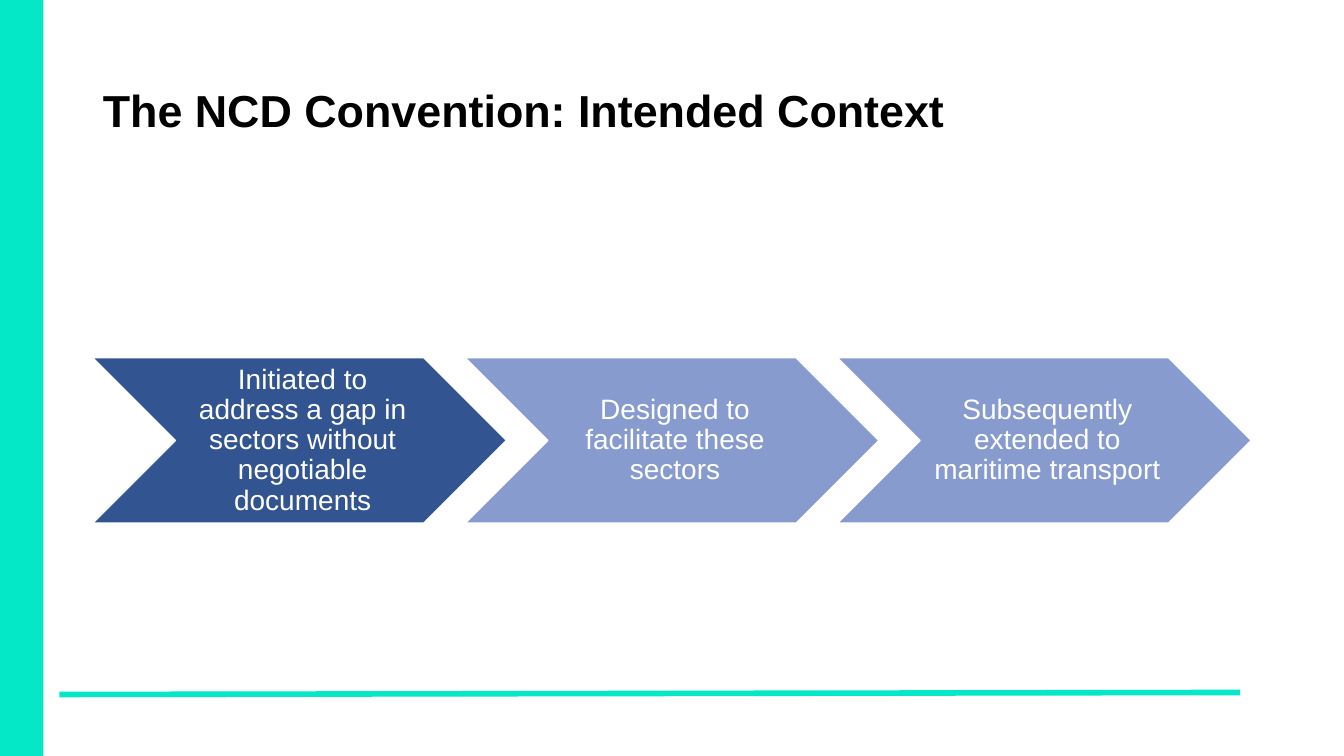
from lxml import etree
from pptx import Presentation
from pptx.dml.color import RGBColor
from pptx.enum.shapes import MSO_CONNECTOR, MSO_SHAPE
from pptx.enum.text import MSO_ANCHOR, PP_ALIGN
from pptx.oxml.ns import qn
from pptx.util import Inches, Pt

COLORS = {
    "accent": "04E8C7",
    "title": "000000",
    "first_step": "325491",
    "next_step": "879BCE",
    "white": "FFFFFF",
}
STEPS = [
    "Initiated to address a gap in sectors without negotiable documents",
    "Designed to facilitate these sectors",
    "Subsequently extended to maritime transport",
]


def rgb(name):
    return RGBColor.from_string(COLORS[name])


def format_text(p, size, color, align, bold=False):
    p.alignment = align
    p.line_spacing = 0.9
    p.font.name = "Arial"
    p.font.size = Pt(size)
    p.font.bold = bold
    p.font.color.rgb = rgb(color)


def add_frame(slide, width, height):
    """Draw the bar on the left edge and the rule near the bottom."""
    rule = slide.shapes.add_connector(
        MSO_CONNECTOR.STRAIGHT,
        Inches(width - 1.03), Inches(height - 0.63),
        Inches(0.59), Inches(height - 0.61))
    rule.line.color.rgb = rgb("accent")
    rule.line.width = Pt(4)
    etree.SubElement(rule._element.spPr, qn("a:effectLst"))

    bar = slide.shapes.add_shape(
        MSO_SHAPE.RECTANGLE, 0, 0, Inches(0.43), Inches(height))
    bar.shadow.inherit = False
    bar.fill.solid()
    bar.fill.fore_color.rgb = rgb("accent")
    bar.line.fill.background()


def set_title(slide, text, left, top, width, height):
    title = slide.shapes.title
    title.left, title.top = Inches(left), Inches(top)
    title.width, title.height = Inches(width), Inches(height)
    tf = title.text_frame
    tf.text = text
    tf.word_wrap = True
    tf.vertical_anchor = MSO_ANCHOR.MIDDLE
    format_text(tf.paragraphs[0], 32, "title", PP_ALIGN.LEFT, bold=True)


def add_process(slide, steps, left, top, width, height):
    """Fill the box with chevrons, each overlapping the next by a tenth."""
    step_width = width / (0.9 * (len(steps) - 1) + 1)
    for i, text in enumerate(steps):
        sp = slide.shapes.add_shape(
            MSO_SHAPE.CHEVRON, Inches(left + 0.9 * step_width * i),
            Inches(top), Inches(step_width), Inches(height))
        sp.shadow.inherit = False
        sp.fill.solid()
        sp.fill.fore_color.rgb = rgb("next_step" if i else "first_step")
        sp.line.color.rgb = rgb("white")
        sp.line.width = Pt(1)

        tf = sp.text_frame
        tf.text = text
        tf.word_wrap = True
        tf.vertical_anchor = MSO_ANCHOR.MIDDLE
        tf.margin_left = Inches(0.09)
        tf.margin_top = tf.margin_right = tf.margin_bottom = Inches(0.03)
        format_text(tf.paragraphs[0], 20, "white", PP_ALIGN.CENTER)


def main():
    width, height = 13.33, 7.5
    prs = Presentation()
    prs.slide_width, prs.slide_height = Inches(width), Inches(height)
    slide = prs.slides.add_slide(prs.slide_layouts[5])
    add_frame(slide, width, height)
    set_title(slide, "The NCD Convention: Intended Context",
              0.92, 0.4, 11.5, 1.45)
    add_process(slide, STEPS, 0.92, 3.55, 11.49, 1.64)
    prs.save("out.pptx")


if __name__ == "__main__":
    main()
